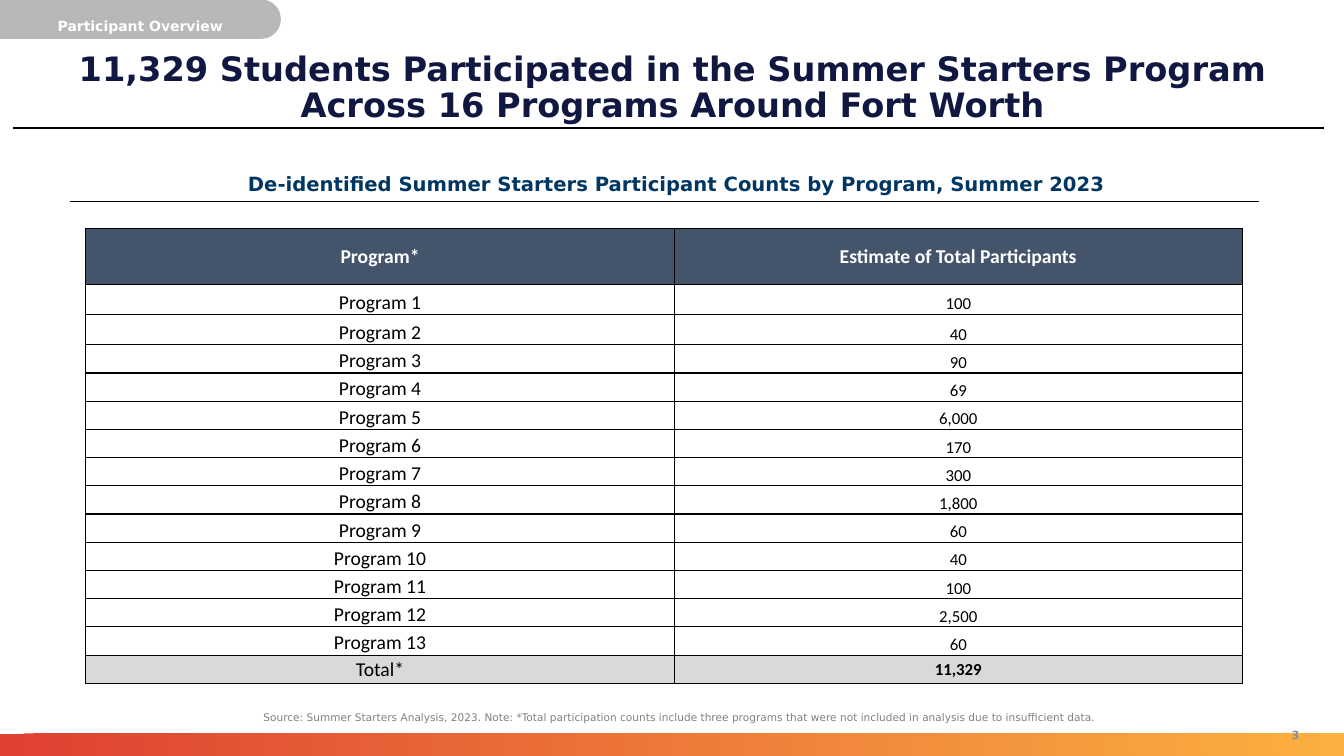
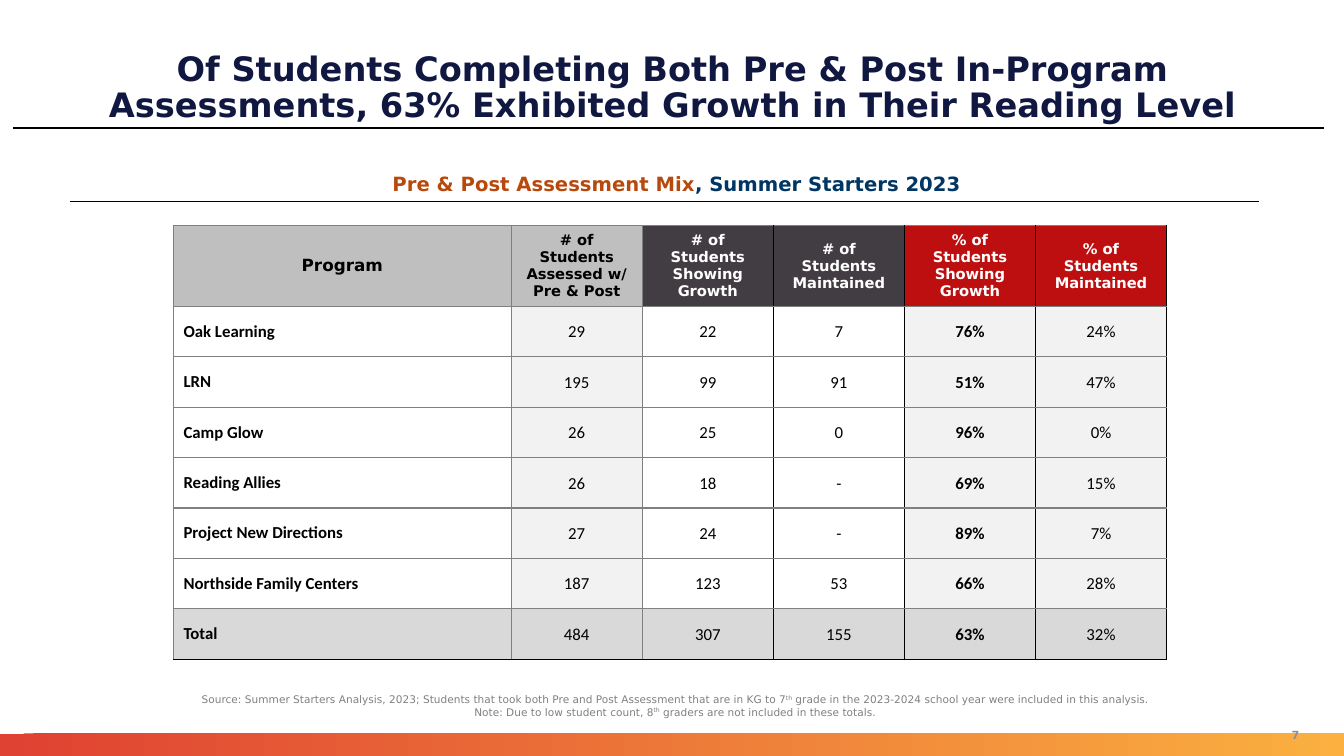
import math

import lxml.etree
import pptx
import pptx.dml.color
import pptx.enum.shapes
import pptx.enum.text
import pptx.oxml.ns
import pptx.util

Inches = pptx.util.Inches
RGBColor = pptx.dml.color.RGBColor
ALIGN = pptx.enum.text.PP_ALIGN
ANCHOR = pptx.enum.text.MSO_ANCHOR
SHAPE = pptx.enum.shapes.MSO_SHAPE

WHITE = RGBColor(0xFF, 0xFF, 0xFF)
BLACK = RGBColor(0x00, 0x00, 0x00)
GREY = RGBColor(0x80, 0x80, 0x80)
NAVY = RGBColor(0x10, 0x17, 0x40)
BLUE = RGBColor(0x00, 0x36, 0x63)
RUST = RGBColor(0xB8, 0x49, 0x0D)
SLATE = RGBColor(0x44, 0x54, 0x6A)
CHARCOAL = RGBColor(0x42, 0x3D, 0x42)
RED = RGBColor(0xBD, 0x0F, 0x10)
TAB_GREY = RGBColor(0xB8, 0xB8, 0xB8)
HEADER_GREY = RGBColor(0xBF, 0xBF, 0xBF)
TOTAL_GREY = RGBColor(0xD9, 0xD9, 0xD9)
PALE_GREY = RGBColor(0xF2, 0xF2, 0xF2)
PAGE_GREY = RGBColor(0x88, 0x8E, 0x9D)
BAND_COLORS = (RGBColor(0xDF, 0x41, 0x32), RGBColor(0xFB, 0xB0, 0x40))

HEADING_FONT = "DejaVu Sans"
BODY_FONT = "Calibri"
WIDTH, HEIGHT = 13.33, 7.5
BAND_HEIGHT = 0.22
TIGHT = (0.01, 0.01, 0.01, 0)
ROOMY = (0.1, 0.05, 0.1, 0.05)


def text_format(size, color, bold=False, name=HEADING_FONT):
    return {"size": pptx.util.Pt(size), "name": name, "bold": bold, "color": color}


TITLE = text_format(24, NAVY, True)
SUBTITLE = text_format(14, BLUE, True)
SUBTITLE_ACCENT = text_format(14, RUST, True)
SOURCE = text_format(7.5, GREY)
SUPERSCRIPT = {**SOURCE, "baseline": "30000"}
PAGE = text_format(8, PAGE_GREY, True)
TAB = text_format(10, WHITE, True)

PARTICIPANTS = {
    "page": "3",
    "tab": "Participant Overview",
    "title": "11,329 Students Participated in the Summer Starters Program "
             "Across 16 Programs Around Fort Worth",
    "subtitle": [("De-identified Summer Starters Participant Counts by Program, Summer 2023",
                  SUBTITLE)],
    "source_box": (0.88, 6.89, 11.66, 0.46),
    "source": [[("Source: Summer Starters Analysis, 2023. Note: *Total participation counts "
                 "include three programs that were not included in analysis due to "
                 "insufficient data.", SOURCE)]],
    "table_at": (0.85, 2.27),
    "columns": [5.84, 5.63],
    "row_heights": [0.55] + [0.3] * 2 + [0.28] * 12,
    "rows": [
        ("Program*", "Estimate of Total Participants"),
        *((f"Program {number}", count) for number, count in enumerate(
            ("100", "40", "90", "69", "6,000", "170", "300",
             "1,800", "60", "40", "100", "2,500", "60"), start=1)),
        ("Total*", "11,329"),
    ],
}

ASSESSMENTS = {
    "page": "7",
    "title": "Of Students Completing Both Pre & Post In-Program Assessments, "
             "63% Exhibited Growth in Their Reading Level",
    "subtitle": [("Pre & Post Assessment Mix", SUBTITLE_ACCENT),
                 (", Summer Starters 2023", SUBTITLE)],
    "source_box": (0.35, 6.77, 12.64, 0.46),
    "source": [
        [("Source: Summer Starters Analysis, 2023; Students that took both Pre and Post "
          "Assessment that are in KG to 7", SOURCE), ("th", SUPERSCRIPT),
         (" grade in the 2023-2024 school year were included in this analysis.", SOURCE)],
        [("Note: Due to low student count, 8", SOURCE), ("th", SUPERSCRIPT),
         (" graders are not included in these totals.", SOURCE)],
    ],
    "table_at": (1.72, 2.24),
    "columns": [3.35] + [1.3] * 5,
    "row_heights": [0.8] + [0.5] * 7,
    "rows": [
        ("Program", "# of Students Assessed w/ Pre & Post", "# of Students Showing Growth",
         "# of Students Maintained", "% of Students Showing Growth",
         "% of Students Maintained"),
        ("Oak Learning", "29", "22", "7", "76%", "24%"),
        ("LRN", "195", "99", "91", "51%", "47%"),
        ("Camp Glow", "26", "25", "0", "96%", "0%"),
        ("Reading Allies", "26", "18", "-", "69%", "15%"),
        ("Project New Directions", "27", "24", "-", "89%", "7%"),
        ("Northside Family Centers", "187", "123", "53", "66%", "28%"),
        ("Total", "484", "307", "155", "63%", "32%"),
    ],
}
ASSESSMENT_HEADER_FILLS = [HEADER_GREY] * 2 + [CHARCOAL] * 2 + [RED] * 2
ASSESSMENT_BODY_FILLS = [WHITE, PALE_GREY, WHITE, WHITE, PALE_GREY, PALE_GREY]


def participant_cell(row, column, last_row):
    """Return the look of one cell of the participant table."""
    header, total = row == 0, row == last_row
    size = 14 if header or column == 0 else 12
    bold = header or (total and column == 1)
    return {
        "format": text_format(size, WHITE if header else BLACK, bold, BODY_FONT),
        "fill": SLATE if header else TOTAL_GREY if total else WHITE,
        "anchor": ANCHOR.MIDDLE if header or total else ANCHOR.BOTTOM,
        "align": ALIGN.CENTER,
        "insets": TIGHT,
        "borders": [BLACK] * 4,
    }


def assessment_cell(row, column, last_row):
    """Return the look of one cell of the assessment table."""
    header, total = row == 0, row == last_row
    if header:
        look = text_format(12 if column == 0 else 10.5, BLACK if column < 2 else WHITE, True)
        fill = ASSESSMENT_HEADER_FILLS[column]
    else:
        look = text_format(12, BLACK, column in (0, 4), BODY_FONT)
        fill = TOTAL_GREY if total else ASSESSMENT_BODY_FILLS[column]
    return {
        "format": look,
        "fill": fill,
        "anchor": ANCHOR.MIDDLE,
        "align": ALIGN.LEFT if column == 0 and not header else ALIGN.CENTER,
        "insets": ROOMY if header or column == 0 else TIGHT,
        "borders": [GREY if column < 3 else BLACK, GREY if column < 2 else BLACK,
                    GREY, BLACK if total else GREY],
    }


def set_attributes(target, values):
    for name, value in values.items():
        setattr(target, name, value)


def margins(insets):
    sides = ("margin_left", "margin_top", "margin_right", "margin_bottom")
    return {side: Inches(inset) for side, inset in zip(sides, insets)}


def write(frame, paragraphs, align=ALIGN.CENTER, **paragraph_format):
    """Fill a text frame; each paragraph is a list of (text, format) runs."""
    for index, runs in enumerate(paragraphs):
        paragraph = frame.add_paragraph() if index else frame.paragraphs[0]
        set_attributes(paragraph, {"alignment": align, **paragraph_format})
        for text, look in runs:
            run = paragraph.add_run()
            run.text = text
            set_attributes(run.font, {key: look[key] for key in ("size", "name", "bold")})
            run.font.color.rgb = look["color"]
            if "baseline" in look:
                run._r.get_or_add_rPr().set("baseline", look["baseline"])


def format_frame(frame, insets, anchor=ANCHOR.MIDDLE):
    set_attributes(frame, {"word_wrap": True, "vertical_anchor": anchor,
                           "auto_size": pptx.enum.text.MSO_AUTO_SIZE.NONE,
                           **margins(insets)})


def add_text(slide, box, paragraphs, insets, anchor=ANCHOR.MIDDLE, **paragraph_format):
    frame = slide.shapes.add_textbox(*map(Inches, box)).text_frame
    format_frame(frame, insets, anchor)
    write(frame, paragraphs, **paragraph_format)


def add_rule(slide, left, right, top):
    rule = slide.shapes.add_connector(pptx.enum.shapes.MSO_CONNECTOR.STRAIGHT,
                                      *map(Inches, (left, top, right, top)))
    rule.line.color.rgb = BLACK
    rule.line.width = pptx.util.Pt(1)
    lxml.etree.SubElement(rule._element.spPr, pptx.oxml.ns.qn("a:effectLst"))


def add_band(slide):
    band = slide.shapes.add_shape(SHAPE.RECTANGLE, *map(
        Inches, (0, HEIGHT - BAND_HEIGHT, WIDTH, BAND_HEIGHT)))
    band.shadow.inherit = False
    band.line.fill.background()
    band.fill.gradient()
    band.fill.gradient_angle = 1
    for stop, color in zip(band.fill.gradient_stops, BAND_COLORS):
        stop.color.rgb = color


def add_tab(slide, text, width=2.78, height=0.38, steps=24):
    """Add the corner tab, whose right end is a half circle."""
    radius = height / 2
    angles = [math.pi * (step / steps - 0.5) for step in range(steps + 1)]
    arc = [(width - radius + radius * math.cos(angle), radius + radius * math.sin(angle))
           for angle in angles]
    outline = slide.shapes.build_freeform(0, 0, scale=1.0)
    outline.add_line_segments([(Inches(x), Inches(y)) for x, y in arc + [(0, height)]])
    tab = outline.convert_to_shape()
    tab.shadow.inherit = False
    tab.fill.solid()
    tab.fill.fore_color.rgb = TAB_GREY
    tab.line.color.rgb = TAB_GREY
    tab.line.width = pptx.util.Pt(0.75)
    format_frame(tab.text_frame, (0.1, 0, 0.1, 0.04), ANCHOR.BOTTOM)
    write(tab.text_frame, [[(text, TAB)]], line_spacing=0.9)


def set_borders(cell, colors):
    """Draw the left, right, top and bottom borders of a cell."""
    properties = cell._tc.get_or_add_tcPr()
    for side, color in zip("LRTB", colors):
        line = lxml.etree.SubElement(properties, pptx.oxml.ns.qn(f"a:ln{side}"),
                                     w=str(pptx.util.Pt(1)))
        fill = lxml.etree.SubElement(line, pptx.oxml.ns.qn("a:solidFill"))
        lxml.etree.SubElement(fill, pptx.oxml.ns.qn("a:srgbClr"), val=str(color))


def add_table(slide, content, cell_look):
    rows, columns, heights = content["rows"], content["columns"], content["row_heights"]
    box = (*content["table_at"], sum(columns), sum(heights))
    table = slide.shapes.add_table(len(rows), len(columns), *map(Inches, box)).table
    set_attributes(table, {"first_row": False, "horz_banding": False})
    for column, width in zip(table.columns, columns):
        column.width = Inches(width)
    for row, height in zip(table.rows, heights):
        row.height = Inches(height)
    for row_index, values in enumerate(rows):
        for column_index, value in enumerate(values):
            cell = table.cell(row_index, column_index)
            look = cell_look(row_index, column_index, len(rows) - 1)
            set_borders(cell, look["borders"])
            cell.fill.solid()
            cell.fill.fore_color.rgb = look["fill"]
            set_attributes(cell, {"vertical_anchor": look["anchor"],
                                  **margins(look["insets"])})
            write(cell.text_frame, [[(value, look["format"])]], look["align"])


def add_slide(presentation, content, cell_look):
    slide = presentation.slides.add_slide(presentation.slide_layouts[5])
    add_band(slide)
    add_text(slide, (12.6, 7.14, 0.5, 0.3), [[(content["page"], PAGE)]], ROOMY)
    add_rule(slide, 0.13, 13.13, 1.27)
    title = slide.shapes.title
    set_attributes(title, dict(zip(("left", "top", "width", "height"),
                                   map(Inches, (0.67, 0.38, 12, 1)))))
    format_frame(title.text_frame, (0.05, 0.1, 0.05, 0.1))
    write(title.text_frame, [[(content["title"], TITLE)]], line_spacing=0.9)
    add_text(slide, (0.71, 1.48, 12, 0.51), [content["subtitle"]], (0, 0.05, 0, 0.05),
             ANCHOR.BOTTOM, space_before=pptx.util.Pt(6))
    add_rule(slide, 0.69, 12.49, 2)
    add_table(slide, content, cell_look)
    add_text(slide, content["source_box"], content["source"], (0.05, 0, 0, 0))
    if "tab" in content:
        add_tab(slide, content["tab"])


def main():
    presentation = pptx.Presentation()
    presentation.slide_width = Inches(WIDTH)
    presentation.slide_height = Inches(HEIGHT)
    add_slide(presentation, PARTICIPANTS, participant_cell)
    add_slide(presentation, ASSESSMENTS, assessment_cell)
    presentation.save("out.pptx")


if __name__ == "__main__":
    main()
